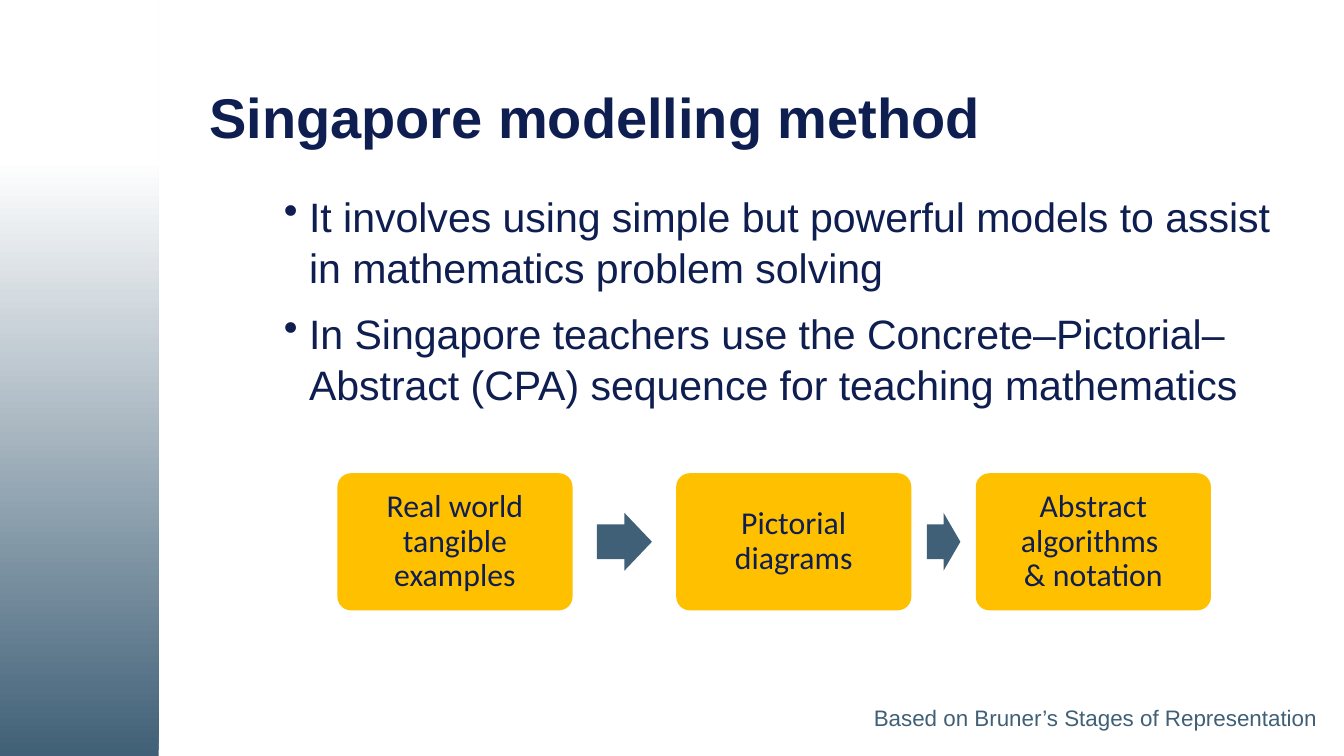
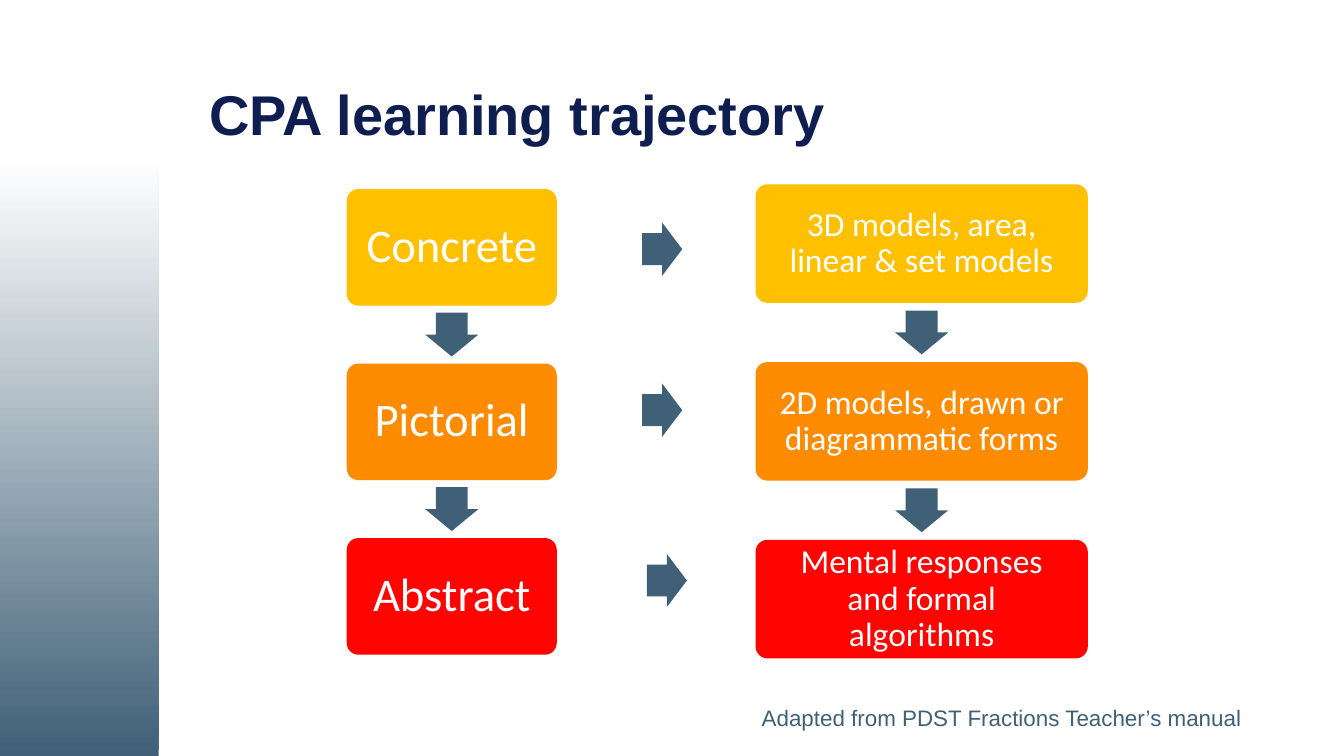
from lxml import etree
from pptx import Presentation
from pptx.dml.color import RGBColor
from pptx.enum.shapes import MSO_SHAPE as Shape
from pptx.enum.text import MSO_ANCHOR as Anchor, PP_ALIGN as Align
from pptx.oxml.ns import qn
from pptx.util import Pt

COLORS = {
    "navy": "0F1E50",
    "slate": "406077",
    "white": "FFFFFF",
    "amber": "FFC000",
    "orange": "FF8B00",
    "red": "FF0400",
}
HEADING_FONT, DIAGRAM_FONT = "Arial", "Calibri"
SLIDE_WIDTH, SLIDE_HEIGHT = 720, 405


def rgb(name):
    return RGBColor.from_string(COLORS[name])


def style_font(font, name, size, color, bold=False):
    font.name, font.size, font.bold = name, Pt(size), bold
    font.color.rgb = rgb(color)


def add_text(slide, text, left, top, width, height, size, color, bold=False):
    box = slide.shapes.add_textbox(Pt(left), Pt(top), Pt(width), Pt(height))
    frame = box.text_frame
    frame.word_wrap = True
    frame.text = text
    for para in frame.paragraphs:
        style_font(para.font, HEADING_FONT, size, color, bold)
    return frame


def add_plain_shape(slide, kind, left, top, width, height, color):
    shape = slide.shapes.add_shape(kind, Pt(left), Pt(top), Pt(width), Pt(height))
    shape.shadow.inherit = False
    shape.fill.solid()
    shape.fill.fore_color.rgb = rgb(color)
    shape.line.fill.background()
    return shape


def add_step(slide, text, left, top, width, height, color, size, text_color, inset=7):
    step = add_plain_shape(slide, Shape.ROUNDED_RECTANGLE, left, top, width, height, color)
    step.adjustments[0] = 0.1
    frame = step.text_frame
    frame.word_wrap = True
    frame.vertical_anchor = Anchor.MIDDLE
    frame.margin_left = frame.margin_right = Pt(inset)
    frame.margin_top = frame.margin_bottom = Pt(inset)
    frame.text = text
    para = frame.paragraphs[0]
    para.alignment = Align.CENTER
    para.line_spacing = 0.9
    style_font(para.font, DIAGRAM_FONT, size, text_color)


def add_arrow(slide, kind, center_x, center_y, width, height):
    arrow = add_plain_shape(slide, kind, center_x - width / 2, center_y - height / 2,
                            width, height, "slate")
    arrow.adjustments[0], arrow.adjustments[1] = 0.6, 0.5


def add_bullets(slide, items, left, top, width, height):
    frame = add_text(slide, "\n".join(items), left, top, width, height, 22, "navy")
    for index, para in enumerate(frame.paragraphs):
        if index:
            para.space_before = Pt(7.5)
        props = para._p.get_or_add_pPr()
        props.set("marL", str(Pt(13.5)))
        props.set("indent", str(-Pt(13.5)))
        bullet = etree.Element(qn("a:buChar"), char="•")
        props.find(qn("a:defRPr")).addprevious(bullet)
        para.line_spacing = 1.04


def add_column(slide, labels, left, top, width, height, pitch, size, inset):
    """Stack steps from concrete to abstract, with an arrow in each gap."""
    for index, (label, color) in enumerate(zip(labels, ("amber", "orange", "red"))):
        step_top = top + index * pitch
        add_step(slide, label, left, step_top, width, height, color, size, "white", inset)
        if index:
            gap_middle = step_top - (pitch - height) / 2
            add_arrow(slide, Shape.DOWN_ARROW, left + width / 2, gap_middle, 28.5, 23.5)


def start_slide(deck, title, title_top):
    """Add a blank slide with the fading side band and the title."""
    slide = deck.slides.add_slide(deck.slide_layouts[6])
    band = add_plain_shape(slide, Shape.RECTANGLE, 0, 0, 85, SLIDE_HEIGHT, "slate")
    band.fill.gradient()
    band.fill.gradient_angle = 90
    for stop, color, position in zip(band.fill.gradient_stops, ("slate", "white"), (0, 0.79)):
        stop.color.rgb = rgb(color)
        stop.position = position
    frame = add_text(slide, title, 105, title_top, 600, 74, 30, "navy", bold=True)
    frame.vertical_anchor = Anchor.MIDDLE
    frame.paragraphs[0].line_spacing = 0.9
    return slide


def add_source(slide, text, left, width):
    add_text(slide, text, left, 373.5, width, 22, 12, "slate")


def build_method_slide(deck):
    slide = start_slide(deck, "Singapore modelling method", 27.5)
    add_bullets(slide, [
        "It involves using simple but powerful models to assist in mathematics problem solving",
        "In Singapore teachers use the Concrete–Pictorial–Abstract (CPA) sequence "
        "for teaching mathematics",
    ], 145, 98, 561, 265)

    # Three stages, with an arrow in the middle of each gap
    top, width, height = 253.5, 126, 73.5
    stages = [
        ("Real world tangible examples", 180.75, None),
        ("Pictorial diagrams", 362.25, 29.5),
        ("Abstract algorithms \v& notation", 522.75, 18),
    ]
    previous_right = None
    for label, left, arrow_width in stages:
        add_step(slide, label, left, top, width, height, "amber", 17, "navy")
        if arrow_width:
            add_arrow(slide, Shape.RIGHT_ARROW, (previous_right + left) / 2,
                      top + height / 2, arrow_width, 31)
        previous_right = left + width
    add_source(slide, "Based on Bruner’s Stages of Representation", 461, 259)


def build_trajectory_slide(deck):
    slide = start_slide(deck, "CPA learning trajectory", 26)
    add_column(slide, ["Concrete", "Pictorial", "Abstract"],
               185.75, 101.25, 112.5, 62.5, 93.5, 25, 8)
    add_column(slide, [
        "3D models, area, linear & set models",
        "2D models, drawn or diagrammatic forms",
        "Mental responses and formal algorithms",
    ], 404.75, 98.75, 178, 63.5, 95.25, 18, 7)

    # Arrows from each stage to its models
    for center_x, center_y in ((354.75, 133.5), (354.75, 219.75), (357.25, 311)):
        add_arrow(slide, Shape.RIGHT_ARROW, center_x, center_y, 21.5, 28.5)
    add_source(slide, "Adapted from PDST Fractions Teacher’s manual", 401, 305)


def main():
    deck = Presentation()
    deck.slide_width, deck.slide_height = Pt(SLIDE_WIDTH), Pt(SLIDE_HEIGHT)
    build_method_slide(deck)
    build_trajectory_slide(deck)
    deck.save("out.pptx")


if __name__ == "__main__":
    main()
